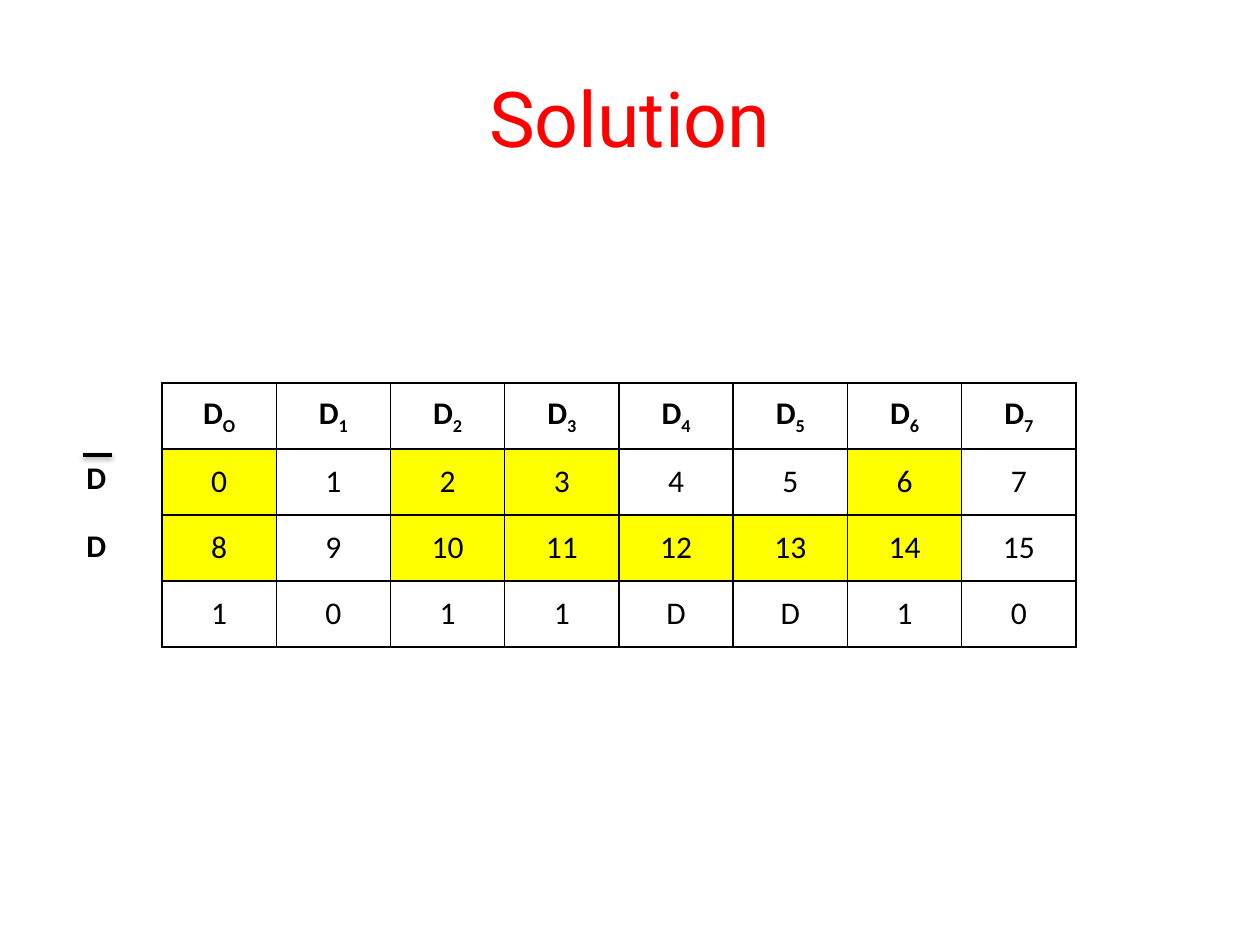
from dataclasses import dataclass

from lxml.etree import SubElement
from pptx import Presentation
from pptx.dml.color import RGBColor
from pptx.enum.shapes import MSO_CONNECTOR
from pptx.enum.text import MSO_ANCHOR, PP_ALIGN
from pptx.oxml import parse_xml
from pptx.oxml.ns import nsdecls, qn
from pptx.slide import Slide
from pptx.table import _Cell
from pptx.text.text import TextFrame
from pptx.util import Emu, Pt

COLORS = {"title": "FF0000", "ink": "000000", "minterm": "FFFF00", "plain": "FFFFFF"}
MINTERMS = {"0", "2", "3", "6", "8", "10", "11", "12", "13", "14"}
INPUTS = "O1234567"
ROWS = [
    [str(number) for number in range(8)],
    [str(number) for number in range(8, 16)],
    list("1011DD10"),
]


@dataclass(frozen=True)
class Label:
    text: str
    left: int
    top: int
    width: int
    height: int
    size: int = 18
    font: str = "Calibri"
    color: str = "ink"
    bold: bool = True
    align: PP_ALIGN = PP_ALIGN.LEFT
    anchor: MSO_ANCHOR = MSO_ANCHOR.TOP


LABELS = [
    Label("Solution", 63, 38, 1134, 157, 44, "Roboto", "title", False,
          PP_ALIGN.CENTER, MSO_ANCHOR.MIDDLE),
    Label("D", 74, 452, 69, 50),
    Label("D", 74, 520, 69, 50),
]


def px(length: int) -> Emu:
    """Turn pixels into EMU at 126 pixels to the inch."""
    return Emu(round(length * 914400 / 126))


def rgb(name: str) -> RGBColor:
    """Look up a named colour."""
    return RGBColor.from_string(COLORS[name])


def write(frame: TextFrame, label: Label, subscript: str = "") -> None:
    """Write one styled paragraph with an optional subscript."""
    paragraph = frame.paragraphs[0]
    paragraph.alignment = label.align
    paragraph.font.size = Pt(label.size)
    paragraph.font.name = label.font
    paragraph.font.bold = label.bold
    paragraph.font.color.rgb = rgb(label.color)
    paragraph.add_run().text = label.text
    if subscript:
        run = paragraph.add_run()
        run.text = subscript
        run._r.get_or_add_rPr().set("baseline", "-25000")


def add_label(slide: Slide, label: Label) -> None:
    """Add a text box for a label."""
    shape = slide.shapes.add_textbox(
        px(label.left), px(label.top), px(label.width), px(label.height))
    shape.text_frame.word_wrap = True
    shape.text_frame.vertical_anchor = label.anchor
    write(shape.text_frame, label)


def style_cell(cell: _Cell, fill: str) -> None:
    """Give a cell its borders, fill and vertical centring."""
    cell.vertical_anchor = MSO_ANCHOR.MIDDLE
    properties = cell._tc.get_or_add_tcPr()
    for side in ("lnL", "lnR", "lnT", "lnB"):
        line = SubElement(properties, qn(f"a:{side}"), w=str(Pt(1)))
        solid = SubElement(line, qn("a:solidFill"))
        SubElement(solid, qn("a:srgbClr"), val=COLORS["ink"])
    cell.fill.solid()
    cell.fill.fore_color.rgb = rgb(fill)


def add_implementation_table(slide: Slide) -> None:
    """Add the multiplexer implementation table."""
    table = slide.shapes.add_table(
        len(ROWS) + 1, len(INPUTS), px(162), px(383), px(914), px(264)).table
    for column in table.columns:
        column.width = px(914) // len(INPUTS)
    for row in table.rows:
        row.height = px(66)
    for column, subscript in enumerate(INPUTS):
        header = table.cell(0, column)
        style_cell(header, "plain")
        write(header.text_frame, Label("D", 0, 0, 0, 0, align=PP_ALIGN.CENTER), subscript)
        for row, values in enumerate(ROWS, start=1):
            cell, text = table.cell(row, column), values[column]
            marked = row < len(ROWS) and text in MINTERMS
            style_cell(cell, "minterm" if marked else "plain")
            write(cell.text_frame,
                  Label(text, 0, 0, 0, 0, bold=False, align=PP_ALIGN.CENTER))


def add_overbar(slide: Slide) -> None:
    """Add the shadowed complement bar above the first D."""
    bar = slide.shapes.add_connector(
        MSO_CONNECTOR.STRAIGHT, px(83), px(455), px(112), px(455))
    bar.line.color.rgb = rgb("ink")
    bar.line.width = Pt(2)
    bar._element.spPr.append(parse_xml(
        f'<a:effectLst {nsdecls("a")}>'
        f'<a:outerShdw blurRad="{Pt(3.1)}" dist="{Pt(1.6)}" dir="5400000" rotWithShape="0">'
        f'<a:srgbClr val="{COLORS["ink"]}"><a:alpha val="38000"/></a:srgbClr>'
        "</a:outerShdw></a:effectLst>"))


def main() -> None:
    """Build and save the slide."""
    presentation = Presentation()
    presentation.slide_width, presentation.slide_height = px(1260), px(945)
    slide = presentation.slides.add_slide(presentation.slide_layouts[6])
    add_implementation_table(slide)
    for label in LABELS:
        add_label(slide, label)
    add_overbar(slide)
    presentation.save("out.pptx")


if __name__ == "__main__":
    main()
